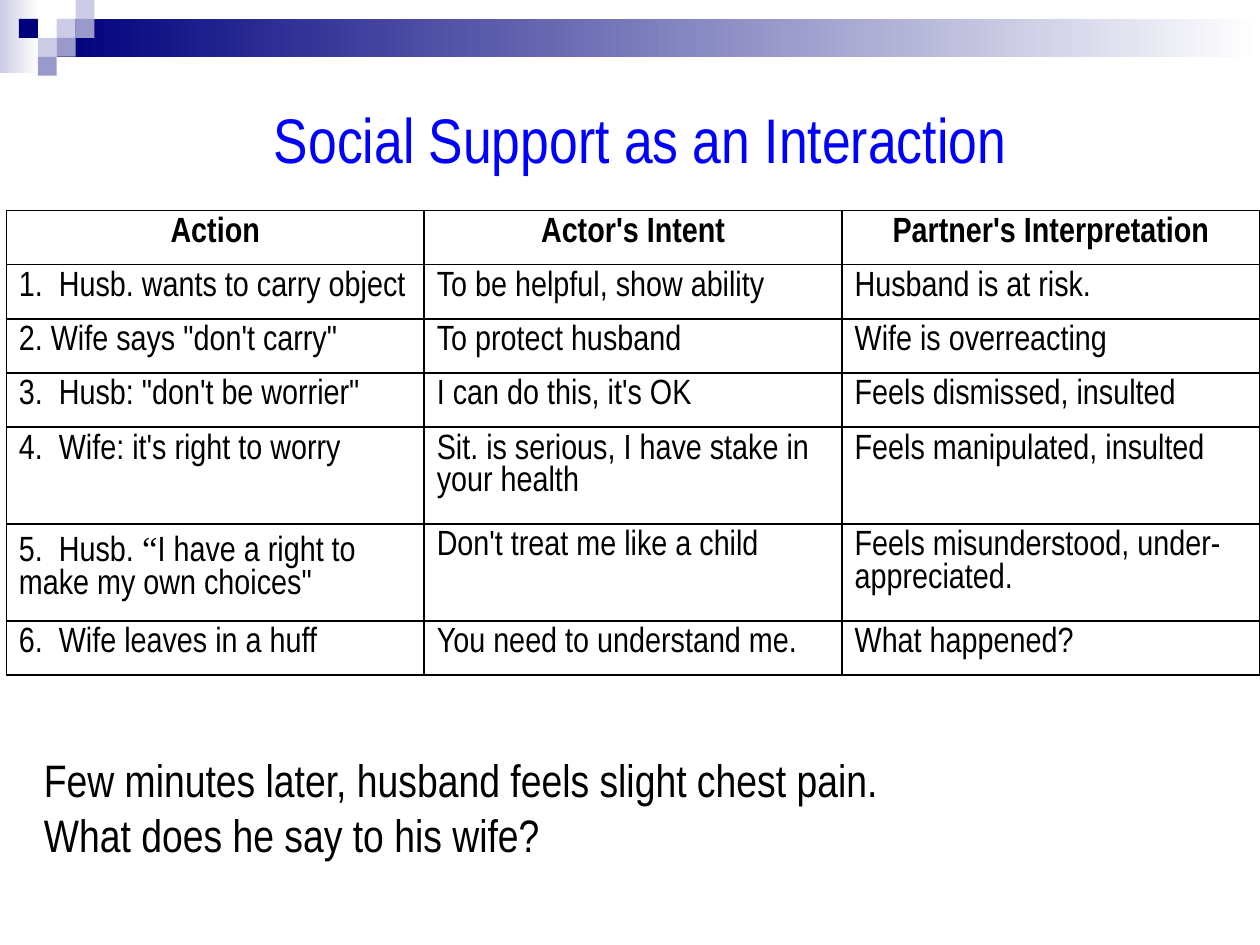
from pptx import Presentation
from pptx import util as u
from pptx.dml.color import RGBColor
from pptx.enum import shapes, text
from pptx.oxml import parse_xml
from pptx.oxml.ns import nsdecls

Inches = u.Inches
NAVY = RGBColor(0x00, 0x00, 0x7D)
LILAC = RGBColor(0xCC, 0xCC, 0xE6)
VIOLET = RGBColor(0x99, 0x99, 0xCC)
WHITE = RGBColor(0xFF, 0xFF, 0xFF)
BLUE = RGBColor(0x00, 0x00, 0xFF)
BLACK = RGBColor(0x00, 0x00, 0x00)
FONT = "Arial Narrow"


def add_run(p, words, size, color, **extra):
    r = p.add_run()
    r.text = words
    r.font.color.rgb = color
    values = {"name": FONT, "size": u.Pt(size), "bold": False, **extra}
    for name, value in values.items():
        setattr(r.font, name, value)


def add_block(left, top, width, height):
    sp = s.shapes.add_shape(shapes.MSO_SHAPE.RECTANGLE, Inches(left),
                            Inches(top), Inches(width), Inches(height))
    sp.shadow.inherit = False
    sp.line.fill.background()
    return sp.fill


prs = Presentation()
prs.slide_width, prs.slide_height = Inches(10), Inches(7.5)
s = prs.slides.add_slide(prs.slide_layouts[5])

# Gradient bands across the top
for box, color in (((0, 0, 0.31, 0.58), LILAC), ((0.45, 0.15, 9.55, 0.3), NAVY)):
    fill = add_block(*box)
    fill.gradient()
    fill.gradient_angle = 0
    for stop, rgb in zip(fill.gradient_stops, (color, WHITE)):
        stop.color.rgb = rgb

# Mosaic of small squares, placed by column and row
SQUARE = 0.15
for col, row, color in ((3, 1, LILAC), (4, 0, LILAC), (4, 1, VIOLET), (2, 2, LILAC),
                        (1, 1, NAVY), (3, 2, VIOLET), (2, 3, VIOLET)):
    fill = add_block(col * SQUARE, row * SQUARE, SQUARE, SQUARE)
    fill.solid()
    fill.fore_color.rgb = color

# Title
title = s.shapes.title
title.left, title.top = Inches(0.83), Inches(0.75)
title.width, title.height = Inches(8.5), Inches(0.7)
tf = title.text_frame
frame_format = {"word_wrap": True, "vertical_anchor": text.MSO_ANCHOR.TOP,
                "auto_size": text.MSO_AUTO_SIZE.NONE}
for name, value in frame_format.items():
    setattr(tf, name, value)
p = tf.paragraphs[0]
p.alignment = text.PP_ALIGN.CENTER
add_run(p, "Social Support as an Interaction", 36, BLUE)

# Interaction table
ROWS = (
    ("Action", "Actor's Intent", "Partner's Interpretation"),
    ("1.  Husb. wants to carry object", "To be helpful, show ability",
     "Husband is at risk."),
    ("2. Wife says \"don't carry\"", "To protect husband", "Wife is overreacting"),
    ("3.  Husb: \"don't be worrier\"", "I can do this, it's OK",
     "Feels dismissed, insulted"),
    ("4.  Wife: it's right to worry", "Sit. is serious, I have stake in your health",
     "Feels manipulated, insulted"),
    ("5.  Husb. “I have a right to make my own choices\"",
     "Don't treat me like a child", "Feels misunderstood, under-appreciated."),
    ("6.  Wife leaves in a huff", "You need to understand me.", "What happened?"),
)
HEIGHTS = (0.43, 0.43, 0.43, 0.43, 0.77, 0.77, 0.43)
table = s.shapes.add_table(len(ROWS), 3, Inches(0.05), Inches(1.67),
                           Inches(9.95), Inches(sum(HEIGHTS))).table
for column in table.columns:
    column.width = Inches(9.95 / 3)
for i, (words, height) in enumerate(zip(ROWS, HEIGHTS)):
    table.rows[i].height = Inches(height)
    header = i == 0
    for j, content in enumerate(words):
        cell = table.cell(i, j)
        p = cell.text_frame.paragraphs[0]
        p.alignment = text.PP_ALIGN.CENTER if header else text.PP_ALIGN.LEFT
        before, quote, after = content.partition("“")
        add_run(p, before, 20, BLACK, bold=header)
        if quote:
            add_run(p, quote, 20, BLACK, name="Times New Roman")
            add_run(p, after, 20, BLACK)
        # Borders go before the fill in the cell properties
        tc_pr = cell._tc.get_or_add_tcPr()
        for side in ("lnL", "lnR", "lnT", "lnB"):
            tc_pr.append(parse_xml(
                f'<a:{side} {nsdecls("a")} w="12700"><a:solidFill>'
                f'<a:srgbClr val="{BLACK}"/></a:solidFill></a:{side}>'))
        cell.fill.background()

# Closing question
tf = s.shapes.add_textbox(Inches(0.25), Inches(5.92), Inches(9.58), Inches(0.97)).text_frame
tf.word_wrap = True
p = tf.paragraphs[0]
add_run(p, "Few minutes later, husband feels slight chest pain.", 26, BLACK)
p.add_line_break()
add_run(p, "What does he say to his wife?", 26, BLACK)

prs.save("out.pptx")
